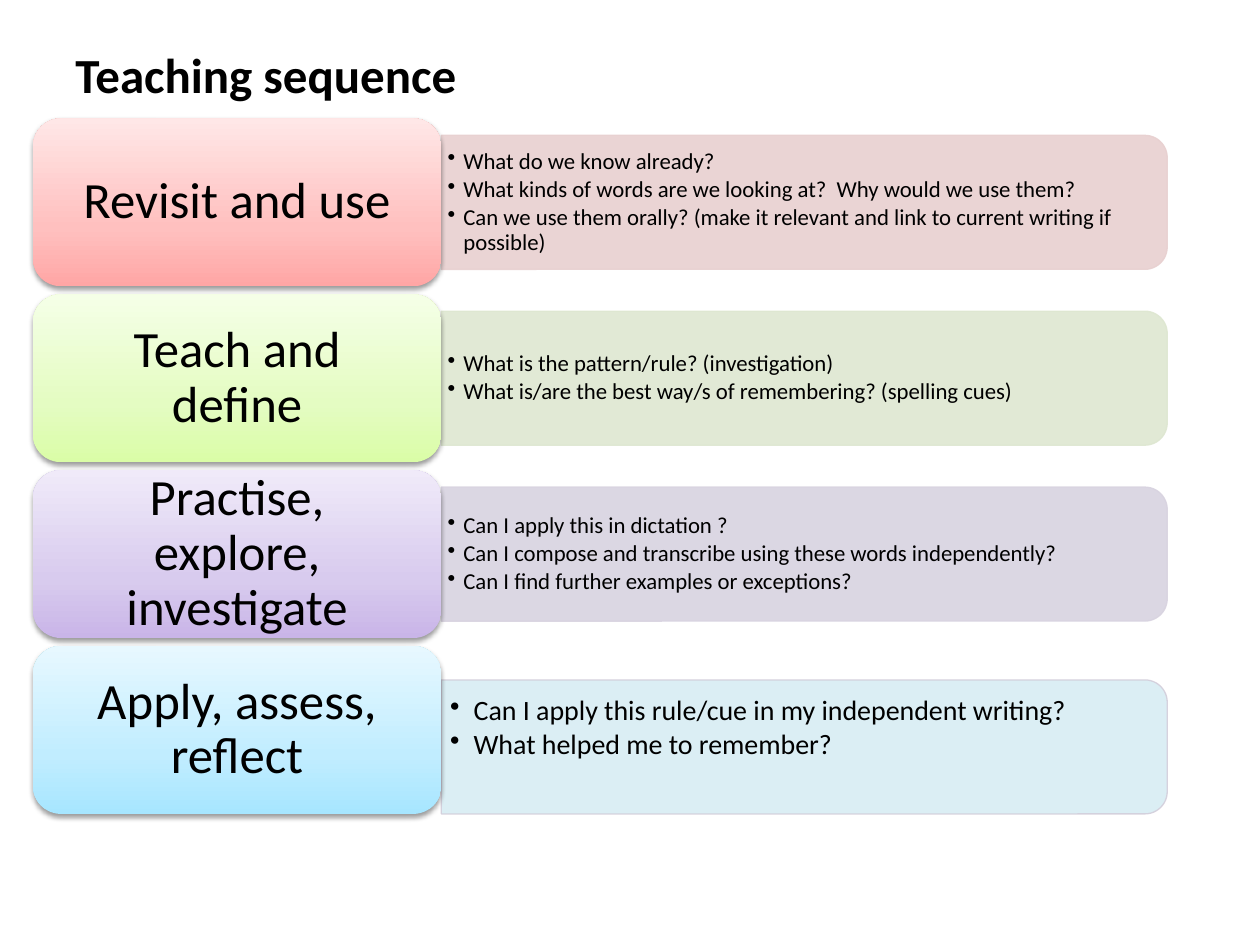
from lxml import etree
from pptx import Presentation
from pptx.dml.color import RGBColor
from pptx.enum.shapes import MSO_SHAPE
from pptx.enum.text import MSO_ANCHOR, PP_ALIGN
from pptx.oxml import parse_xml
from pptx.oxml.ns import qn
from pptx.util import Pt

ROUND, TAB = MSO_SHAPE.ROUNDED_RECTANGLE, MSO_SHAPE.ROUND_2_SAME_RECTANGLE
MID = MSO_ANCHOR.MIDDLE
LEFT, CENTER = PP_ALIGN.LEFT, PP_ALIGN.CENTER
NS = 'xmlns:a="http://schemas.openxmlformats.org/drawingml/2006/main"'

# Content: heading, gradient from the bottom up, panel fill, questions
TITLE = "Teaching sequence"
STEPS = [
    ("Revisit and use", ("FFA6A5", "FFC0BF", "FFE7E7"), "E8D0D0",
     ["What do we know already?",
      "What kinds of words are we looking at?  Why would we use them?",
      "Can we use them orally? (make it relevant and link to current "
      "writing if possible)"]),
    ("Teach and define", ("DAFDA7", "E4FCC2", "F5FFE7"), "DEE7D1",
     ["What is the pattern/rule? (investigation)",
      "What is/are the best way/s of remembering? (spelling cues)"]),
    ("Practise, explore, investigate", ("C9B5E8", "D8CBEE", "F0EAF9"), "D8D3E0",
     ["Can I apply this in dictation ?",
      "Can I compose and transcribe using these words independently?",
      "Can I find further examples or exceptions?"]),
    ("Apply, assess, reflect", ("A7E6FF", "C1EDFF", "E7F8FF"), "DBEEF4",
     ["Can I apply this rule/cue in my independent writing?",
      "What helped me to remember?"]),
]

# Panel formats: the last step is larger, lower and opaque
PLAIN = {"size": 13, "hang": 9, "drop": 0, "alpha": 90, "line": None,
         "pads": (3.6, 2.2, 3.6, 2.2)}
LAST = {"size": 16, "hang": 13.5, "drop": 9.7, "alpha": 100, "line": "D3CEDB",
        "pads": (5, 2.9, 5, 24)}

# Layout in points
CARD_X, CARD_Y, CARD_W, CARD_H, STEP = 18.9, 67.7, 233.3, 95.9, 100.5
PANEL_X, PANEL_W, PANEL_H = CARD_X + CARD_W, 414.8, 76.6
TEXT_W, TEXT_H = 411, 69


def color(code):
    return RGBColor.from_string(code)


def write(shape, lines, size, pads, align=LEFT, hang=0, bold=False,
          space=0.9, after=0):
    frame = shape.text_frame
    sides = ("margin_left", "margin_top", "margin_right", "margin_bottom")
    look = {"word_wrap": True, "vertical_anchor": MID,
            **{side: Pt(pad) for side, pad in zip(sides, pads)}}
    for key, val in look.items():
        setattr(frame, key, val)
    for i, line in enumerate(lines):
        para = frame.paragraphs[0] if i == 0 else frame.add_paragraph()
        run = para.add_run()
        run.text = line
        for key, val in {"alignment": align, "line_spacing": space,
                         "space_after": Pt(after)}.items():
            setattr(para, key, val)
        for key, val in {"name": "Calibri", "size": Pt(size),
                         "bold": bold}.items():
            setattr(run.font, key, val)
        run.font.color.rgb = color("000000")
        if hang:
            props = para._p.get_or_add_pPr()
            props.set("marL", str(Pt(hang)))
            props.set("indent", str(-Pt(hang)))
            etree.SubElement(props, qn("a:buChar")).set("char", "•")


def fade(paint, alpha):
    tone = paint._xPr.find(qn("a:solidFill"))[0]
    etree.SubElement(tone, qn("a:alpha")).set("val", str(alpha * 1000))


def add_panel(shapes, mid, tint, lines, look):
    # A turned tab: its unturned frame shares the same centre
    shape = shapes.add_shape(
        TAB, Pt(PANEL_X + (PANEL_W - PANEL_H) / 2), Pt(mid - PANEL_W / 2),
        Pt(PANEL_H), Pt(PANEL_W))
    shape.rotation = 90
    shape.shadow.inherit = False
    shape.line.width = Pt(0.75)
    for paint, code in ((shape.fill, tint), (shape.line.fill, look["line"] or tint)):
        paint.solid()
        paint.fore_color.rgb = color(code)
        fade(paint, 90 if paint is not shape.fill else look["alpha"])
    box = shapes.add_textbox(Pt(PANEL_X), Pt(mid - TEXT_H / 2),
                             Pt(TEXT_W), Pt(TEXT_H))
    write(box, lines, look["size"], look["pads"], hang=look["hang"],
          after=round(look["size"] * 0.15, 2))


def add_card(shapes, top, label, tones):
    card = shapes.add_shape(ROUND, Pt(CARD_X), Pt(top), Pt(CARD_W), Pt(CARD_H))
    card.line.fill.background()
    card.shadow.inherit = False
    stops = "".join(
        f'<a:gs pos="{pos * 1000}"><a:srgbClr val="{tone}"/></a:gs>'
        for pos, tone in zip((0, 35, 100), tones))
    props = card._element.spPr
    props.find(qn("a:prstGeom")).addnext(parse_xml(
        f'<a:gradFill {NS} rotWithShape="1"><a:gsLst>{stops}</a:gsLst>'
        '<a:lin ang="16200000" scaled="0"/></a:gradFill>'))
    props.find(qn("a:effectLst")).append(parse_xml(
        f'<a:outerShdw {NS} blurRad="{Pt(3.1)}" dist="{Pt(1.6)}" dir="5400000" '
        'rotWithShape="0"><a:srgbClr val="000000"><a:alpha val="38000"/>'
        '</a:srgbClr></a:outerShdw>'))
    write(card, [label], 29, (13.4, 9, 13.4, 9), CENTER)


def main():
    deck = Presentation()
    deck.slide_width, deck.slide_height = Pt(720), Pt(540)
    shapes = deck.slides.add_slide(deck.slide_layouts[6]).shapes

    # Title
    title = shapes.add_textbox(Pt(36), Pt(21.6), Pt(301), Pt(41))
    write(title, [TITLE], 28, (7.2, 3.6, 7.2, 3.6), bold=True, space=1)

    # Steps: question panel, then heading card over its edge
    for i, (label, tones, tint, lines) in enumerate(STEPS):
        top = CARD_Y + i * STEP
        look = LAST if i == len(STEPS) - 1 else PLAIN
        add_panel(shapes, top + CARD_H / 2 + look["drop"], tint, lines, look)
        add_card(shapes, top, label, tones)

    deck.save("out.pptx")


if __name__ == "__main__":
    main()
